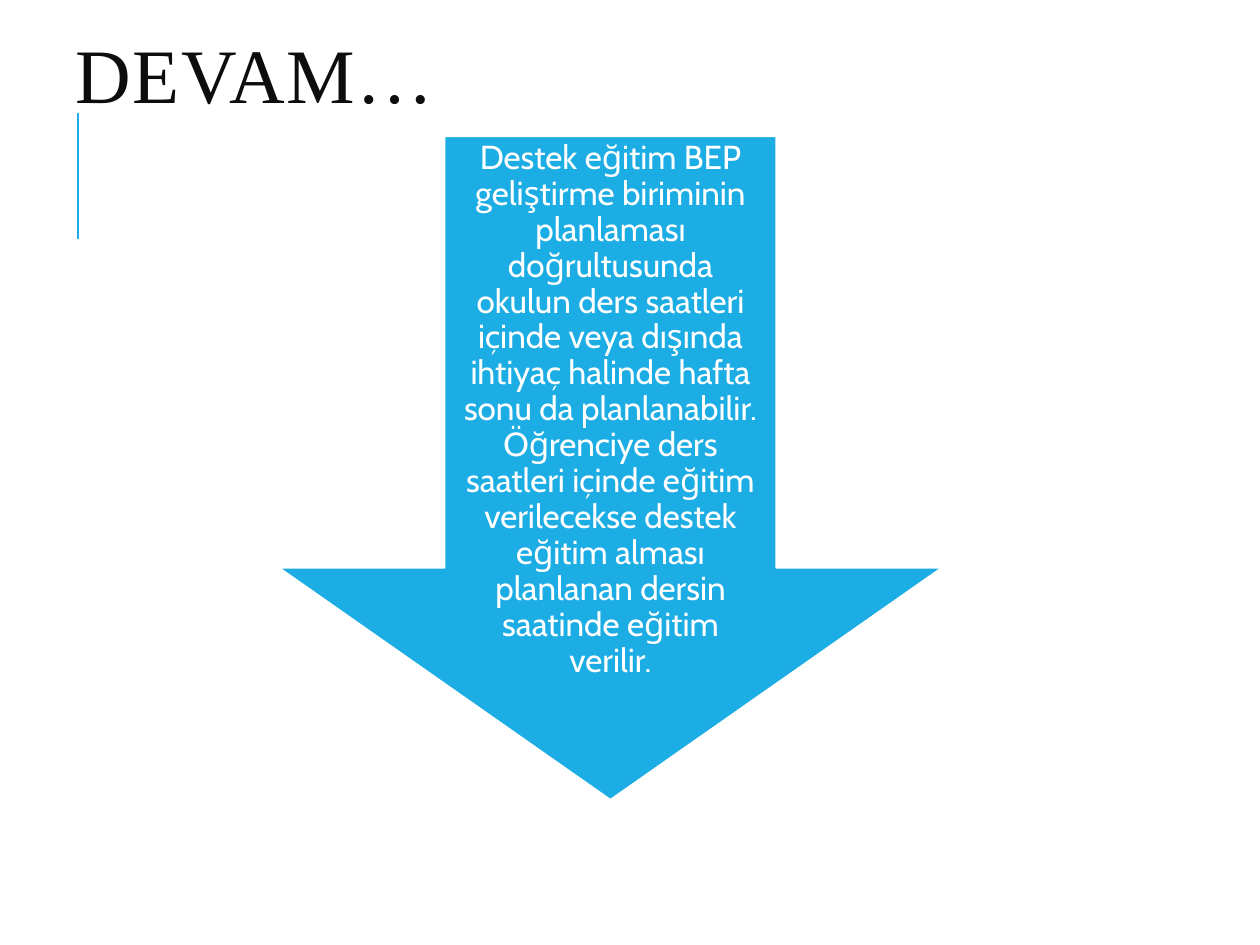
import dataclasses
import pptx
import pptx.util
import pptx.dml.color
import pptx.enum.shapes
import pptx.enum.text
import pptx.oxml.ns
import lxml.etree

Inches = pptx.util.Inches
Pt = pptx.util.Pt
Align = pptx.enum.text.PP_ALIGN
Anchor = pptx.enum.text.MSO_ANCHOR


@dataclasses.dataclass
class Theme:
    accent: str = "1CADE4"
    ink: str = "0D0D0D"
    paper: str = "FFFFFF"
    head_font: str = "Times New Roman"
    body_font: str = "Cabin"
    head_size: int = 44
    body_size: int = 19


def color(code):
    return pptx.dml.color.RGBColor.from_string(code)


class Page:
    """Holds the theme and the slide being drawn."""

    def __init__(self, slide, theme):
        self.slide = slide
        self.theme = theme
        fill = slide.background.fill
        fill.solid()
        fill.fore_color.rgb = color(theme.paper)

    def set_text(self, shape, text, font, size, ink, align, gap):
        frame = shape.text_frame
        frame.word_wrap = True
        frame.auto_size = pptx.enum.text.MSO_AUTO_SIZE.NONE
        frame.vertical_anchor = Anchor.MIDDLE
        frame.text = text
        para = frame.paragraphs[0]
        para.alignment = align
        para.line_spacing = gap
        para.font.name = font
        para.font.size = Pt(size)
        para.font.color.rgb = color(ink)
        return frame

    def title(self, text, left, top, width, height):
        shape = self.slide.shapes.title
        shape.left, shape.top = Inches(left), Inches(top)
        shape.width, shape.height = Inches(width), Inches(height)
        look = self.theme
        frame = self.set_text(shape, text, look.head_font, look.head_size,
                              look.ink, Align.LEFT, 0.8)
        # Letter spacing in hundredths of a point
        run = frame.paragraphs[0].runs[0]
        run._r.get_or_add_rPr().set("spc", "100")

    def rule(self, x, start, end):
        line = self.slide.shapes.add_connector(
            pptx.enum.shapes.MSO_CONNECTOR.STRAIGHT,
            Inches(x), Inches(start), Inches(x), Inches(end))
        line.line.color.rgb = color(self.theme.accent)
        line.line.width = Pt(1.5)
        lxml.etree.SubElement(line._element.spPr,
                              pptx.oxml.ns.qn("a:effectLst"))

    def arrow(self, left, top, size, shaft, head):
        """Draw a down arrow; shaft and head are shares of its size."""
        shape = self.slide.shapes.add_shape(
            pptx.enum.shapes.MSO_SHAPE.DOWN_ARROW,
            Inches(left), Inches(top), Inches(size), Inches(size))
        shape.adjustments[0] = shaft
        shape.adjustments[1] = head
        shape.shadow.inherit = False
        shape.fill.solid()
        shape.fill.fore_color.rgb = color(self.theme.accent)
        shape.line.color.rgb = color(self.theme.paper)
        shape.line.width = Pt(1.25)

    def label(self, text, left, top, width, height, inset):
        box = self.slide.shapes.add_textbox(
            Inches(left), Inches(top), Inches(width), Inches(height))
        look = self.theme
        frame = self.set_text(box, text, look.body_font, look.body_size,
                              look.paper, Align.CENTER, 0.9)
        frame.margin_left = frame.margin_right = Inches(inset)
        frame.margin_top = frame.margin_bottom = Inches(inset)


def main():
    deck = pptx.Presentation()
    deck.slide_width, deck.slide_height = Inches(10), Inches(7.5)
    page = Page(deck.slides.add_slide(deck.slide_layouts[5]), Theme())
    page.rule(0.62, 1.9, 0.9)
    page.title("DEVAM…", 0.5, 0.3, 9, 0.69)

    left, top, size, shaft, head = 2.21, 1.08, 5.27, 0.5, 0.35
    page.arrow(left, top, size, shaft, head)
    page.label(
        "Destek eğitim BEP geliştirme biriminin planlaması doğrultusunda "
        "okulun ders saatleri içinde veya dışında ihtiyaç halinde hafta "
        "sonu da planlanabilir. Öğrenciye ders saatleri içinde eğitim "
        "verilecekse destek eğitim alması planlanan dersin saatinde "
        "eğitim verilir.",
        left + size * (1 - shaft) / 2, top, size * shaft,
        size * (1 - head * (1 - shaft)), 0.15)
    deck.save("out.pptx")


if __name__ == "__main__":
    main()
